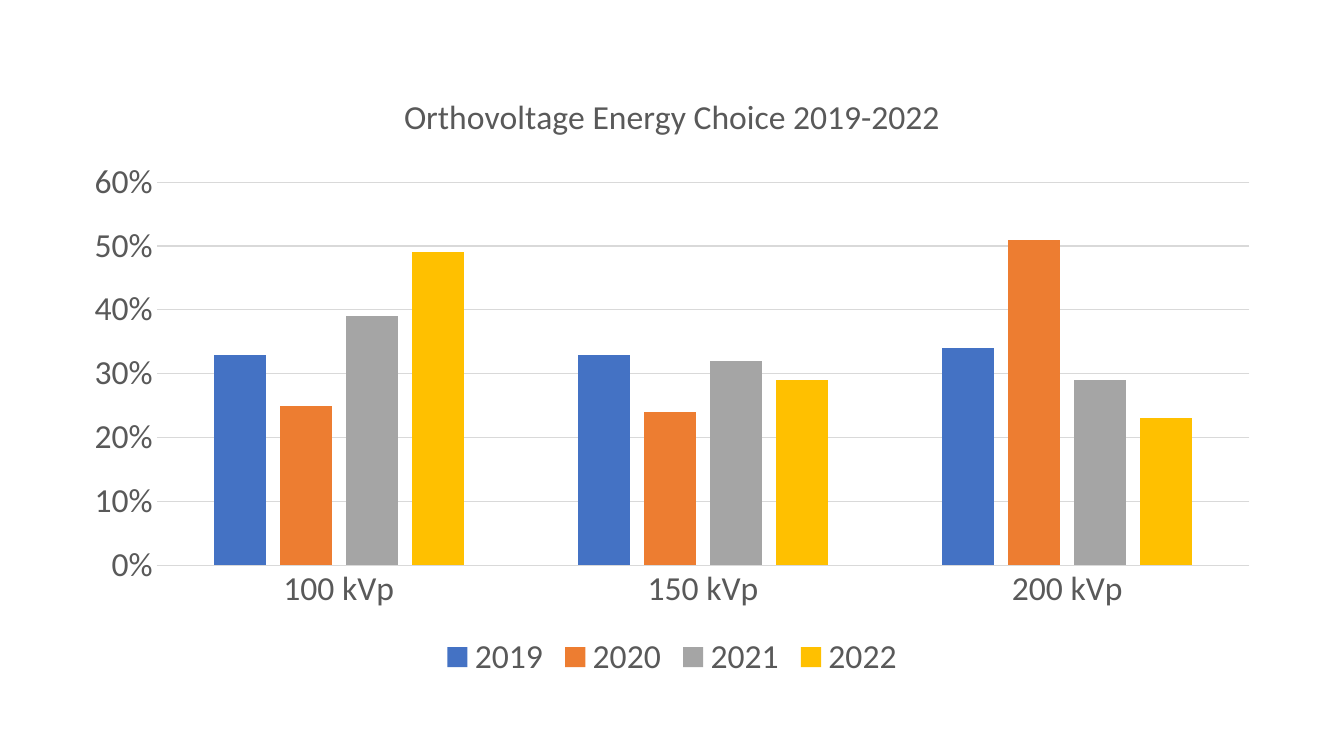
"""Build a slide with a column chart of orthovoltage energy choice by year."""
from typing import NamedTuple

from pptx import Presentation
from pptx.chart.axis import CategoryAxis, ValueAxis
from pptx.chart.chart import Chart
from pptx.chart.data import CategoryChartData
from pptx.dml.color import RGBColor
from pptx.dml.line import LineFormat
from pptx.enum.chart import XL_CHART_TYPE, XL_LEGEND_POSITION, XL_TICK_MARK
from pptx.text.text import Font
from pptx.util import Inches, Pt

TEXT_GRAY = RGBColor(0x59, 0x59, 0x59)
LINE_GRAY = RGBColor(0xD9, 0xD9, 0xD9)
BLUE = RGBColor(0x44, 0x72, 0xC4)
ORANGE = RGBColor(0xED, 0x7D, 0x31)
GRAY = RGBColor(0xA5, 0xA5, 0xA5)
GOLD = RGBColor(0xFF, 0xC0, 0x00)


class YearShares(NamedTuple):
    year: str
    shares: tuple[float, float, float]
    color: RGBColor


ENERGIES = ("100 kVp", "150 kVp", "200 kVp")
YEARS = (
    YearShares("2019", (0.33, 0.33, 0.34), BLUE),
    YearShares("2020", (0.25, 0.24, 0.51), ORANGE),
    YearShares("2021", (0.39, 0.32, 0.29), GRAY),
    YearShares("2022", (0.49, 0.29, 0.23), GOLD),
)


def style_font(font: Font) -> None:
    font.name = "Calibri"
    font.size = Pt(24)
    font.bold = False
    font.color.rgb = TEXT_GRAY


def style_line(line: LineFormat) -> None:
    line.color.rgb = LINE_GRAY
    line.width = Pt(0.75)


def style_axis(axis: CategoryAxis | ValueAxis) -> None:
    axis.major_tick_mark = XL_TICK_MARK.NONE
    axis.minor_tick_mark = XL_TICK_MARK.NONE
    style_font(axis.tick_labels.font)


def style_chart(chart: Chart) -> None:
    chart.has_title = True
    title = chart.chart_title
    title.include_in_layout = False
    title.text_frame.text = "Orthovoltage Energy Choice 2019-2022"
    style_font(title.text_frame.paragraphs[0].font)

    chart.has_legend = True
    chart.legend.position = XL_LEGEND_POSITION.BOTTOM
    chart.legend.include_in_layout = False
    style_font(chart.legend.font)

    style_axis(chart.category_axis)
    style_line(chart.category_axis.format.line)

    value_axis = chart.value_axis
    style_axis(value_axis)
    value_axis.minimum_scale = 0
    value_axis.maximum_scale = 0.6
    value_axis.major_unit = 0.1
    value_axis.format.line.fill.background()
    style_line(value_axis.major_gridlines.format.line)
    value_axis.tick_labels.number_format = "0%"
    value_axis.tick_labels.number_format_is_linked = False

    plot = chart.plots[0]
    plot.vary_by_categories = False
    plot.gap_width = 219
    plot.overlap = -27
    for series, year in zip(plot.series, YEARS):
        series.format.fill.solid()
        series.format.fill.fore_color.rgb = year.color


def main() -> None:
    deck = Presentation()
    deck.slide_width = Inches(13.33)
    deck.slide_height = Inches(7.5)
    page = deck.slides.add_slide(deck.slide_layouts[6])

    data = CategoryChartData(number_format="0%")
    data.categories = ENERGIES
    for year in YEARS:
        data.add_series(year.year, year.shares)
    frame = page.shapes.add_chart(
        XL_CHART_TYPE.COLUMN_CLUSTERED,
        Inches(0.7), Inches(0.7), Inches(11.93), Inches(6.09), data,
    )
    style_chart(frame.chart)
    deck.save("out.pptx")


if __name__ == "__main__":
    main()
